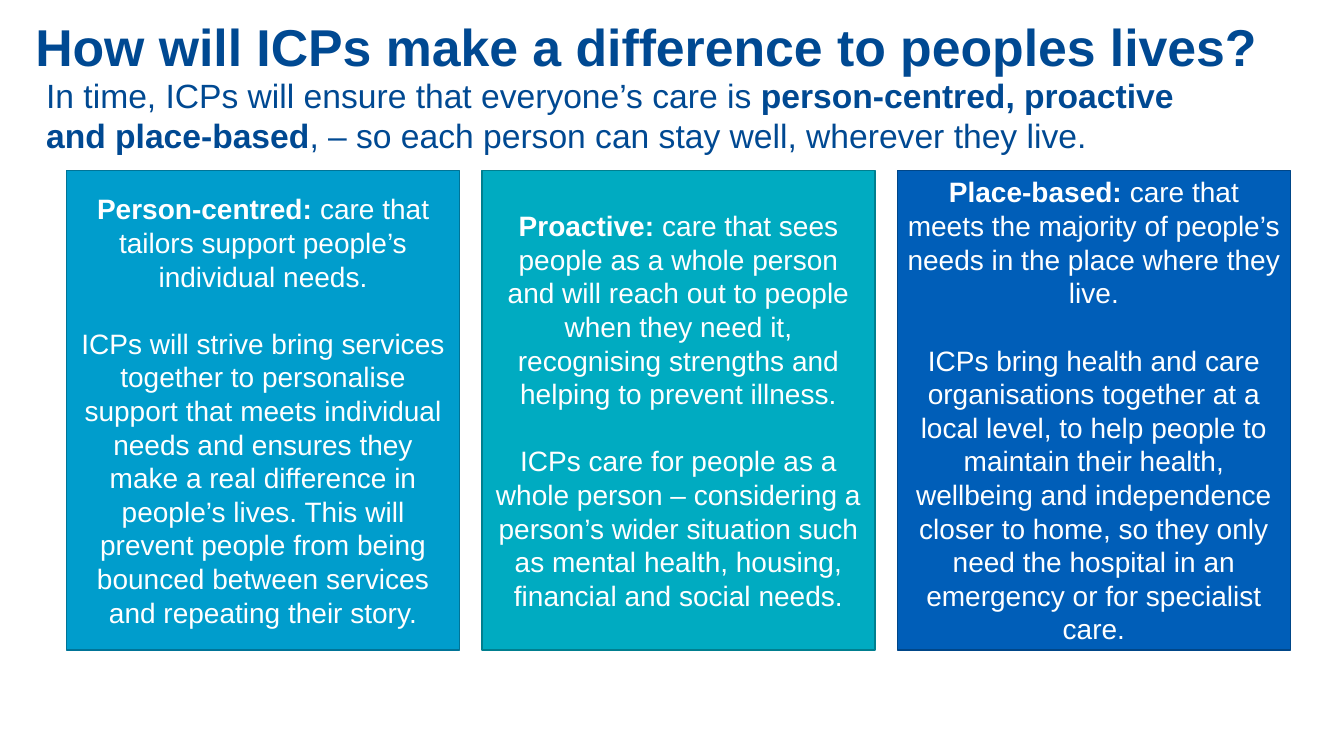
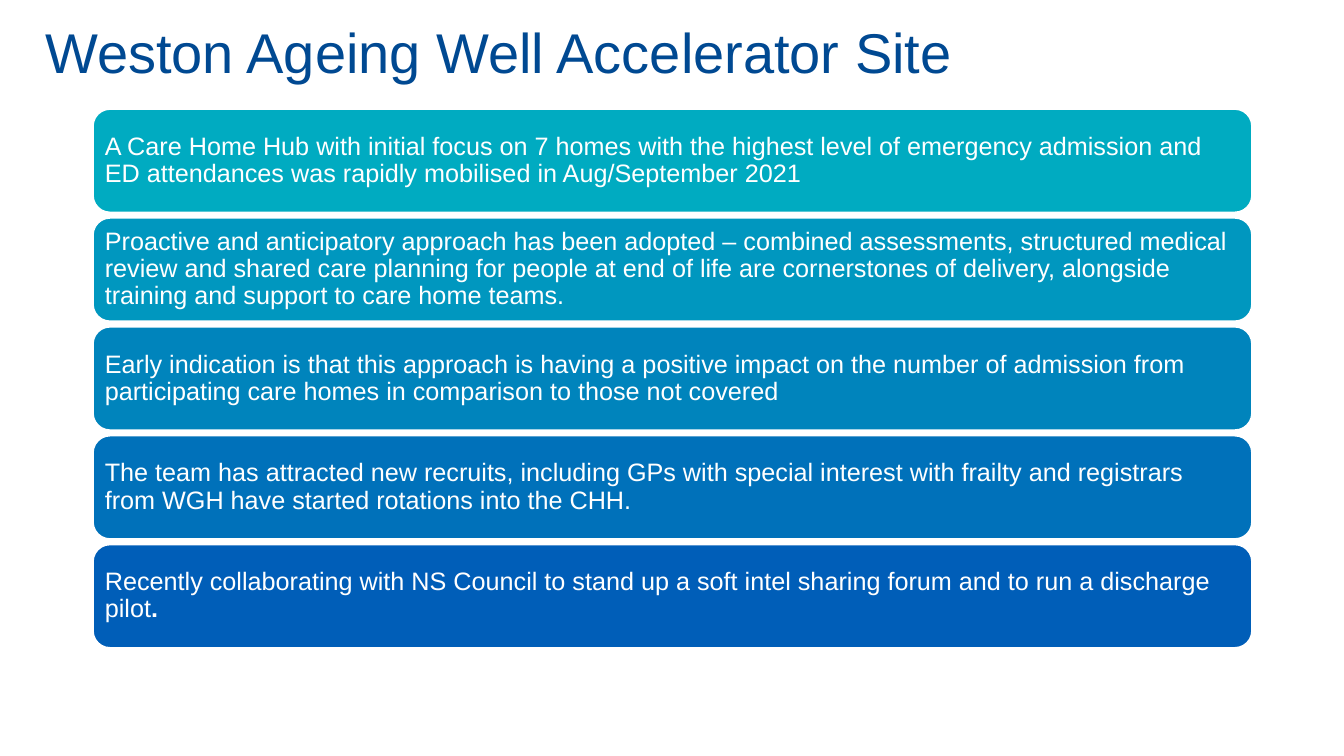
from pptx import Presentation
from pptx.dml.color import RGBColor
from pptx.enum.shapes import MSO_SHAPE
from pptx.enum.text import MSO_ANCHOR, MSO_AUTO_SIZE, PP_ALIGN
from pptx.util import Inches, Pt

RECTANGLE, ROUNDED = MSO_SHAPE.RECTANGLE, MSO_SHAPE.ROUNDED_RECTANGLE
TOP, MIDDLE = MSO_ANCHOR.TOP, MSO_ANCHOR.MIDDLE
LEFT, CENTER = PP_ALIGN.LEFT, PP_ALIGN.CENTER

FONT = "Arial"
NAVY, WHITE = "004992", "FFFFFF"
SKY, TEAL, BLUE = "009DCC", "00ABC1", "005EB8"


def write(shape, paragraphs, size, color=WHITE, bold=False, align=LEFT, anchor=MIDDLE,
          line_spacing=1.0, gap=0, inset=(0.1, 0.05)):
    """Fill a shape with paragraphs, each a list of (text, bold) runs or a plain string."""
    frame = shape.text_frame
    frame.word_wrap = True
    frame.auto_size = MSO_AUTO_SIZE.NONE
    frame.vertical_anchor = anchor
    frame.margin_left = frame.margin_right = Inches(inset[0])
    frame.margin_top = frame.margin_bottom = Inches(inset[1])
    for number, runs in enumerate(paragraphs):
        paragraph = frame.add_paragraph() if number else frame.paragraphs[0]
        paragraph.alignment = align
        paragraph.line_spacing = line_spacing
        paragraph.space_before = Pt(gap if number else 0)
        for text, run_bold in [(runs, bold)] if isinstance(runs, str) else runs:
            run = paragraph.add_run()
            run.text = text
            run.font.name = FONT
            run.font.size = Pt(size)
            run.font.bold = run_bold
            run.font.color.rgb = RGBColor.from_string(color)


def add_panel(slide, kind, left, top, width, height, fill, line, line_width):
    panel = slide.shapes.add_shape(kind, Inches(left), Inches(top), Inches(width), Inches(height))
    panel.shadow.inherit = False
    panel.fill.solid()
    panel.fill.fore_color.rgb = RGBColor.from_string(fill)
    panel.line.color.rgb = RGBColor.from_string(line)
    panel.line.width = Pt(line_width)
    return panel


prs = Presentation()
prs.slide_width, prs.slide_height = Inches(13.33), Inches(7.5)
title_only = prs.slide_layouts[5]

# Slide 1: three aims of care
aims_slide = prs.slides.add_slide(title_only)
title = aims_slide.shapes.title
title.left, title.top, title.width, title.height = map(Inches, (0.11, 0.17, 12.87, 1.13))
write(title, ["How will ICPs make a difference to peoples lives?"], size=37, color=NAVY,
      bold=True, anchor=TOP, line_spacing=0.9, inset=(0.24, 0.05))

intro = aims_slide.shapes.add_textbox(Inches(0.36), Inches(0.69), Inches(12.06), Inches(1.31))
write(intro, [[("In time, ICPs will ensure that everyone’s care is ", False),
               ("person-centred, proactive and place-based", True),
               (", – so each person can stay well, wherever they live.", False)]],
      size=24, color=NAVY, anchor=TOP)

aims = [
    (SKY, "007497", "Person-centred: ",
     "care that tailors support people’s individual needs.",
     "ICPs will strive bring services together to personalise support that meets individual "
     "needs and ensures they make a real difference in people’s lives. This will prevent "
     "people from being bounced between services and repeating their story."),
    (TEAL, "007F8F", "Proactive: ",
     "care that sees people as a whole person and will reach out to people when they need it, "
     "recognising strengths and helping to prevent illness.",
     "ICPs care for people as a whole person – considering a person’s wider situation such as "
     "mental health, housing, financial and social needs."),
    (BLUE, "004688", "Place-based: ",
     "care that meets the majority of people’s needs in the place where they live.",
     "ICPs bring health and care organisations together at a local level, to help people to "
     "maintain their health, wellbeing and independence closer to home, so they only need the "
     "hospital in an emergency or for specialist care."),
]
for column, (fill, outline, aim, meaning, action) in enumerate(aims):
    card = add_panel(aims_slide, RECTANGLE, 0.66 + 4.12 * column, 1.69, 3.9, 4.76,
                     fill, outline, 1)
    write(card, [[(aim, True), (meaning, False)], action], size=20, align=CENTER, gap=24)

# Slide 2: accelerator site progress
site_slide = prs.slides.add_slide(title_only)
title = site_slide.shapes.title
title.left, title.top, title.width, title.height = map(Inches, (0.35, -0.18, 11.5, 1.45))
write(title, ["Weston Ageing Well Accelerator Site"], size=40, color=NAVY, line_spacing=0.9)

progress = [
    (TEAL, "A Care Home Hub with initial focus on 7 homes with the highest level of emergency "
           "admission and ED attendances was rapidly mobilised in Aug/September 2021"),
    ("0097BF", "Proactive and anticipatory approach has been adopted – combined assessments, "
               "structured medical review and shared care planning for people at end of life are "
               "cornerstones of delivery, alongside training and support to care home teams."),
    ("0084BC", "Early indication is that this approach is having a positive impact on the number "
               "of admission from participating care homes in comparison to those not covered"),
    ("0071BA", "The team has attracted new recruits, including GPs with special interest with "
               "frailty and registrars from WGH have started rotations into the CHH."),
    (BLUE, [("Recently collaborating with NS Council to stand up a soft intel sharing forum and "
             "to run a discharge pilot", False), (".", True)]),
]
for row, (fill, point) in enumerate(progress):
    bar = add_panel(site_slide, ROUNDED, 0.92, 1.08 + 1.08 * row, 11.5, 1.03, fill, WHITE, 1.5)
    write(bar, [point], size=18, line_spacing=0.9, inset=(0.07, 0.07))

prs.save("out.pptx")
